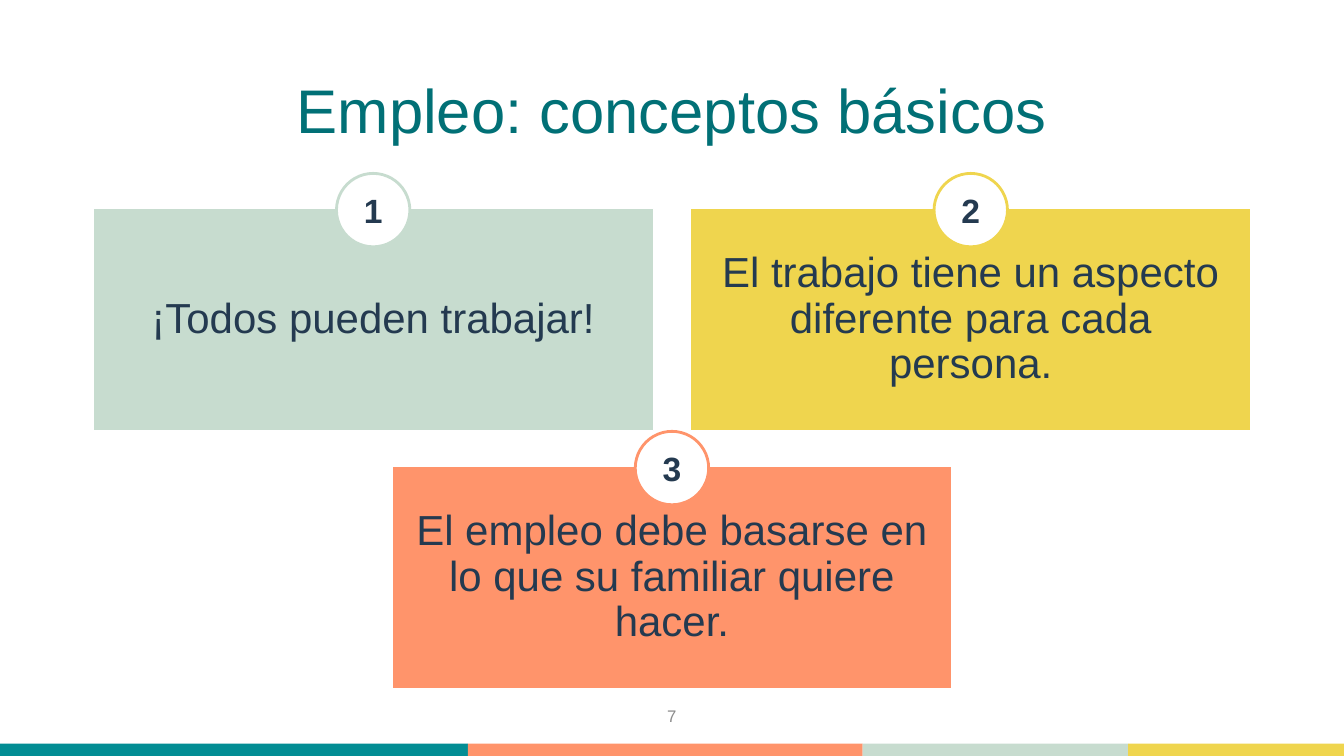
from pptx import Presentation
from pptx.dml.color import RGBColor
from pptx.enum import shapes, text
from pptx.util import Cm, Pt

TEAL = RGBColor(0x02, 0x8D, 0x94)
DEEP = RGBColor(0x01, 0x70, 0x76)
CORAL = RGBColor(0xFF, 0x94, 0x6B)
SAGE = RGBColor(0xC7, 0xDC, 0xCF)
GOLD = RGBColor(0xEF, 0xD5, 0x4E)
NAVY = RGBColor(0x24, 0x3A, 0x50)
GRAY = RGBColor(0x8C, 0x8C, 0x8C)
WHITE = RGBColor(0xFF, 0xFF, 0xFF)

TITLE = "Empleo: conceptos básicos"
PAGE = "7"
CARDS = [
    ("¡Todos pueden trabajar!", SAGE),
    ("El trabajo tiene un aspecto diferente para cada persona.", GOLD),
    ("El empleo debe basarse en lo que su familiar quiere hacer.", CORAL),
]
BANDS = [(TEAL, 11.79), (CORAL, 9.95), (SAGE, 6.69), (GOLD, 5.44)]

WIDE, HIGH = 33.87, 19.05
CARD_W, CARD_H = 14.12, 5.59
GAP_X, GAP_Y = 0.94, 0.91
TOP = 5.26
COLS = 2
DISC = 1.85
DISC_UP = 0.89
BAND_Y = 18.74

RECT = shapes.MSO_SHAPE.RECTANGLE
OVAL = shapes.MSO_SHAPE.OVAL

prs = Presentation()
prs.slide_width, prs.slide_height = Cm(WIDE), Cm(HIGH)
slide = prs.slides.add_slide(prs.slide_layouts[6])


def write(shape, words, size, color, bold=False, space=1.0, inset=0.25):
    frame = shape.text_frame
    frame.word_wrap = True
    frame.vertical_anchor = text.MSO_ANCHOR.MIDDLE
    frame.margin_left = frame.margin_right = Cm(inset)
    frame.margin_top = frame.margin_bottom = Cm(inset)
    para = frame.paragraphs[0]
    para.alignment = text.PP_ALIGN.CENTER
    para.line_spacing = space
    run = para.add_run()
    run.text = words
    font = run.font
    font.name, font.size, font.bold = "Arial", Pt(size), bold
    font.color.rgb = color


def draw(kind, x, y, w, h, fill, line=None, weight=1):
    shape = slide.shapes.add_shape(kind, Cm(x), Cm(y), Cm(w), Cm(h))
    shape.shadow.inherit = False
    shape.fill.solid()
    shape.fill.fore_color.rgb = fill
    if line is None:
        shape.line.fill.background()
    else:
        shape.line.color.rgb = line
        shape.line.width = Pt(weight)
    return shape


def label(x, y, w, h, words, **style):
    write(slide.shapes.add_textbox(Cm(x), Cm(y), Cm(w), Cm(h)), words, **style)


left = 0
for color, width in BANDS:
    draw(RECT, left, BAND_Y, width, HIGH - BAND_Y, color)
    left += width

label(2.33, 1.02, 29.21, 3.68, TITLE, size=44, color=DEEP, space=0.9)
label(13.12, 17.53, 7.62, 1.02, PAGE, size=12, color=GRAY, inset=0.13)

spots = []
for i, (words, color) in enumerate(CARDS):
    row, col = divmod(i, COLS)
    count = min(COLS, len(CARDS) - row * COLS)
    span = count * CARD_W + (count - 1) * GAP_X
    x = (WIDE - span) / 2 + col * (CARD_W + GAP_X)
    y = TOP + row * (CARD_H + GAP_Y)
    card = draw(RECT, x, y, CARD_W, CARD_H, color, WHITE)
    write(card, words, 30, NAVY, space=0.9, inset=0.3)
    spots.append((x + (CARD_W - DISC) / 2, y - DISC_UP, color))

for num, (x, y, color) in enumerate(spots, 1):
    disc = draw(OVAL, x, y, DISC, DISC, WHITE, color, 2)
    write(disc, str(num), 24, NAVY, bold=True, inset=0)

prs.save("out.pptx")
